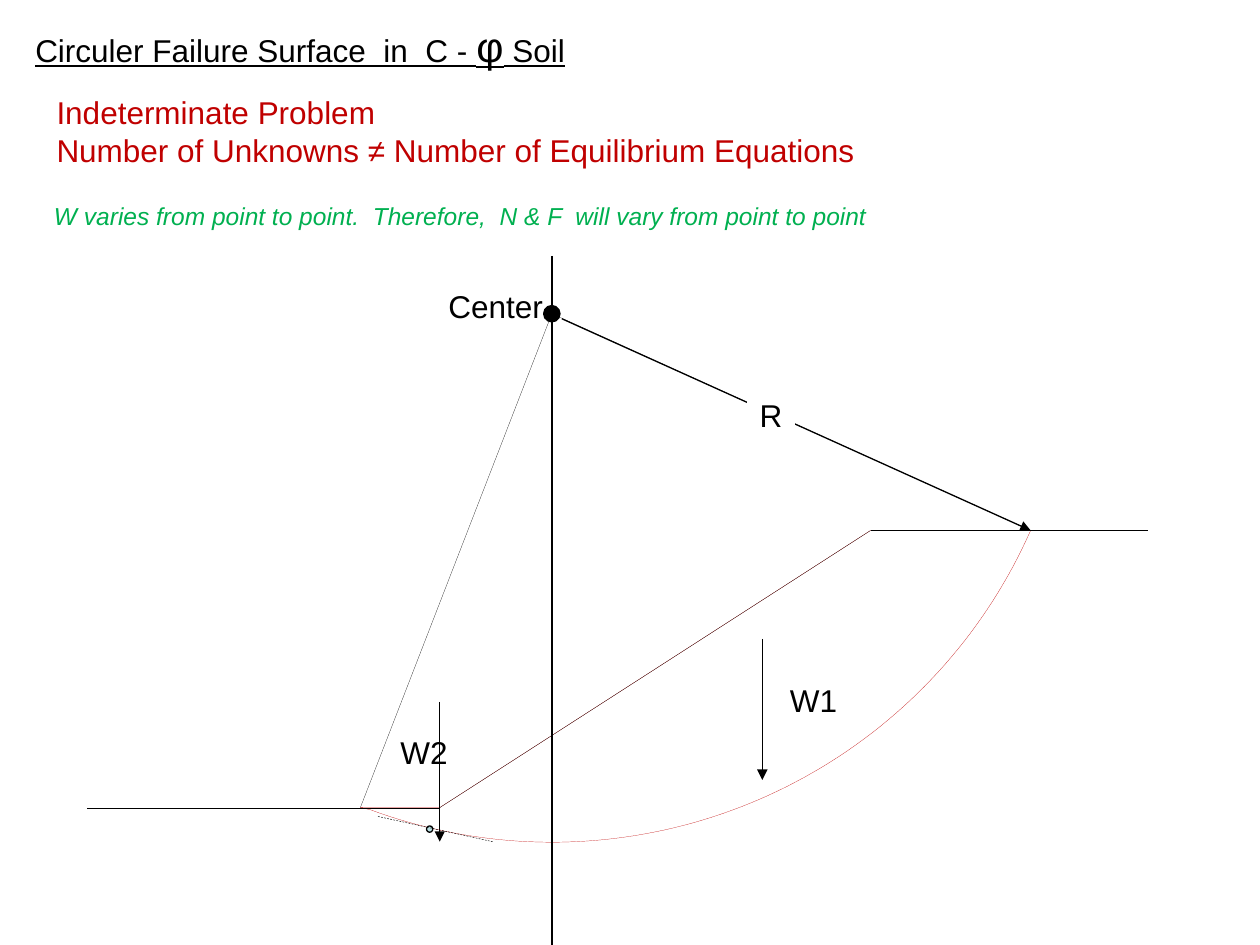
import math
from dataclasses import dataclass

from lxml import etree
from pptx import Presentation
from pptx.dml.color import RGBColor
from pptx.enum.dml import MSO_LINE
from pptx.enum.shapes import MSO_CONNECTOR, MSO_SHAPE
from pptx.enum.text import MSO_ANCHOR, MSO_AUTO_SIZE, PP_ALIGN
from pptx.oxml.ns import qn
from pptx.util import Inches, Pt

STRAIGHT = MSO_CONNECTOR.STRAIGHT
OVAL = MSO_SHAPE.OVAL
DASH = MSO_LINE.DASH
TOP = MSO_ANCHOR.TOP
LEFT = PP_ALIGN.LEFT
NO_FIT = MSO_AUTO_SIZE.NONE


@dataclass(frozen=True)
class Theme:
    font: str = "Arial"
    ink: RGBColor = RGBColor(0, 0, 0)
    paper: RGBColor = RGBColor(0xFF, 0xFF, 0xFF)
    red: RGBColor = RGBColor(0xC0, 0, 0)
    green: RGBColor = RGBColor(0, 0xB0, 0x50)
    pale: RGBColor = RGBColor(0xBB, 0xE0, 0xE3)
    body: float = 18
    symbol: float = 24
    note: float = 14
    hair: float = 0.1
    thin: float = 0.25
    line: float = 0.75


T = Theme()


def add_run(p, text, size=T.body, color=T.ink, underline=None, italic=None):
    r = p.add_run()
    r.text = text
    r.font.name = T.font
    r.font.size = Pt(size)
    r.font.color.rgb = color
    r.font.underline = underline
    r.font.italic = italic


def prepare_frame(sp):
    tf = sp.text_frame
    tf.word_wrap = False
    tf.auto_size = NO_FIT
    tf.vertical_anchor = TOP
    tf.paragraphs[0].alignment = LEFT
    return tf


def add_text(slide, box, lines, **style):
    sp = slide.shapes.add_textbox(*map(Inches, box))
    tf = prepare_frame(sp)
    for i, line in enumerate(lines):
        p = tf.add_paragraph() if i else tf.paragraphs[0]
        add_run(p, line, **style)
    return sp


def add_line(slide, start, end, width=T.line, arrow=False, dash=None):
    sp = slide.shapes.add_connector(STRAIGHT, *map(Inches, start + end))
    sp.line.color.rgb = T.ink
    sp.line.width = Pt(width)
    if dash:
        sp.line.dash_style = dash
    if arrow:
        ln = sp.line._get_or_add_ln()
        etree.SubElement(ln, qn("a:tailEnd"), type="triangle")
    etree.SubElement(sp._element.spPr, qn("a:effectLst"))


def add_dot(slide, center, size, fill):
    x, y = center
    sp = slide.shapes.add_shape(
        OVAL, Inches(x - size / 2), Inches(y - size / 2), Inches(size), Inches(size))
    sp.shadow.inherit = False
    sp.fill.solid()
    sp.fill.fore_color.rgb = fill
    sp.line.color.rgb = T.ink
    sp.line.width = Pt(T.line)


def add_sliding_mass(slide, center, entry, outlet, toe, crest, steps=80):
    cx, cy = center
    radius = math.dist(center, entry)
    first = math.atan2(entry[1] - cy, entry[0] - cx)
    last = math.atan2(outlet[1] - cy, outlet[0] - cx)
    angles = [first + (last - first) * i / steps for i in range(1, steps)]
    arc = [(cx + radius * math.cos(a), cy + radius * math.sin(a)) for a in angles]
    builder = slide.shapes.build_freeform(*map(Inches, entry))
    outline = arc + [outlet, toe, crest]
    builder.add_line_segments([tuple(map(Inches, pt)) for pt in outline], close=True)
    sp = builder.convert_to_shape()
    sp.shadow.inherit = False
    sp.fill.background()
    sp.line.color.rgb = T.red
    sp.line.width = Pt(T.hair)


def add_title(slide, box):
    sp = slide.shapes.title
    sp.left, sp.top, sp.width, sp.height = map(Inches, box)
    p = prepare_frame(sp).paragraphs[0]
    add_run(p, "Circuler Failure Surface  in  C - ", underline=True)
    add_run(p, "φ", size=T.symbol, underline=True)
    add_run(p, " Soil", underline=True)


def add_statements(slide, box):
    x, y, w, h = box
    add_text(slide, (x + 0.02, y, w - 0.09, 0.71),
             ["Indeterminate Problem",
              "Number of Unknowns ≠ Number of Equilibrium Equations"], color=T.red)
    add_text(slide, (x, y + h - 0.34, w, 0.34),
             ["W varies from point to point.  Therefore,  N & F  will vary from point to point"],
             size=T.note, color=T.green, italic=True)


def add_slope_diagram(slide, box):
    x, y, w, h = box

    def at(dx, dy):
        return x + dx, y + dy

    def label(text, dx, dy, width):
        return add_text(slide, at(dx, dy) + (width, 0.4), [text])

    top, base = 2.18, 4.38
    axis, pivot = 3.69, at(3.69, 0.46)
    crest, toe = at(6.22, top), at(2.8, base)
    entry, outlet = at(7.49, top), at(2.17, base)

    add_sliding_mass(slide, at(axis, 0.5), entry, outlet, toe, crest)
    for start, end in [(at(w, top), crest), (crest, toe), (toe, at(0, base)),
                       (pivot, entry), (pivot, outlet)]:
        add_line(slide, start, end, T.hair)
    label("Center", 2.77, 0.2, 0.96)
    add_dot(slide, pivot, 0.13, T.ink)
    add_line(slide, at(axis + 0.08, 0.5), entry, arrow=True)
    radius_label = label("R", 5.24, 1.06, 0.38)
    radius_label.fill.solid()
    radius_label.fill.fore_color.rgb = T.paper
    add_dot(slide, at(2.72, 4.55), 0.05, T.pale)
    add_line(slide, at(2.31, 4.45), at(3.22, 4.65), T.thin, dash=DASH)
    add_line(slide, at(5.36, 3.04), at(5.36, 4.16), arrow=True)
    label("W1", 5.48, 3.33, 0.58)
    add_line(slide, at(2.8, 3.54), at(2.8, 4.65), arrow=True)
    add_line(slide, at(axis, 0), at(axis, h))
    label("W2", 2.39, 3.74, 0.58)


def main():
    prs = Presentation()
    prs.slide_width, prs.slide_height = Inches(10), Inches(7.5)
    slide = prs.slides.add_slide(prs.slide_layouts[5])
    add_title(slide, (0.18, 0.11, 4.7, 0.51))
    add_statements(slide, (0.33, 0.69, 6.68, 1.2))
    add_slope_diagram(slide, (0.69, 2.03, 8.42, 5.47))
    prs.save("out.pptx")


if __name__ == "__main__":
    main()
